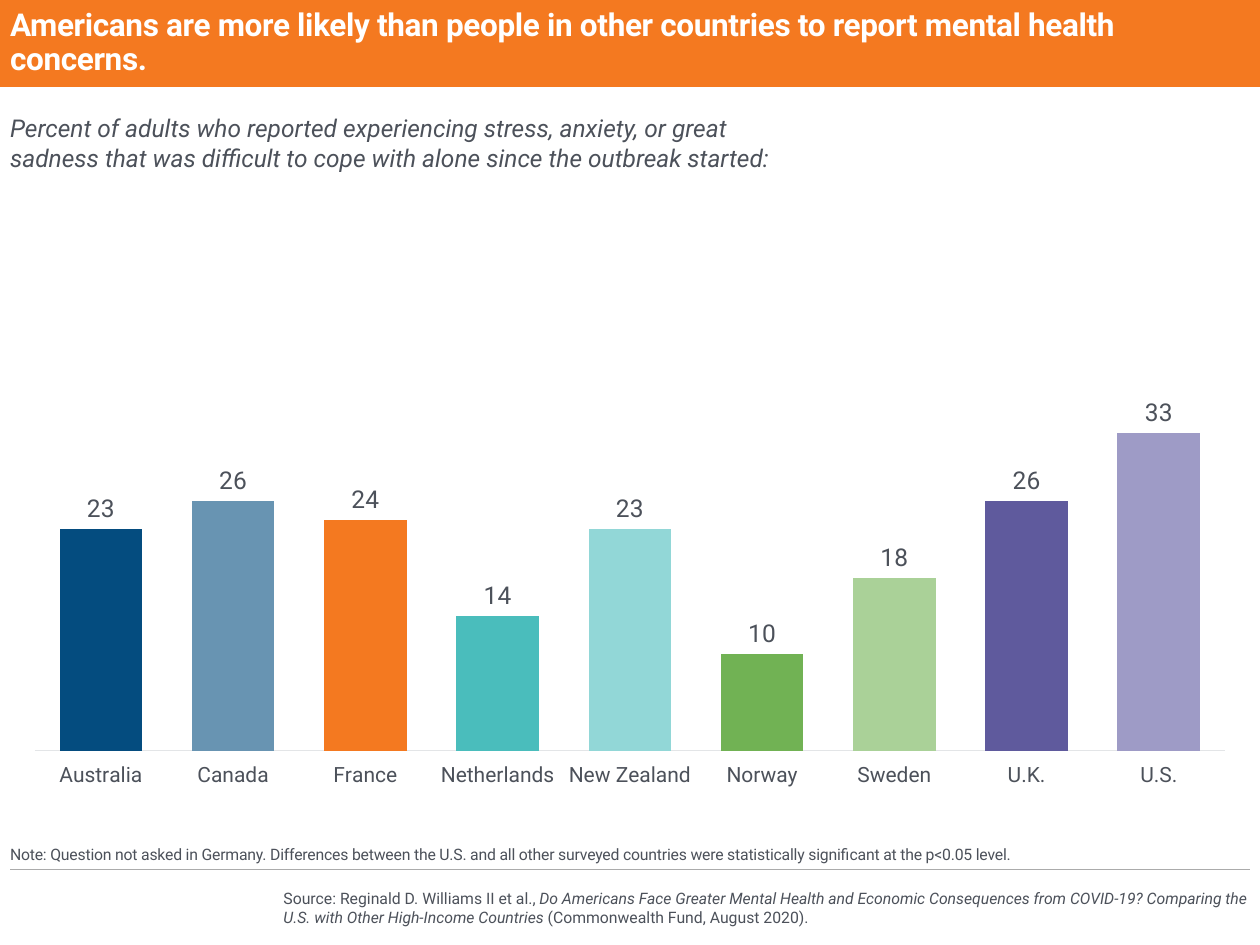
from lxml import etree
from pptx import Presentation
from pptx.chart.data import CategoryChartData
from pptx.dml.color import RGBColor
from pptx.enum.chart import XL_CHART_TYPE, XL_LABEL_POSITION, XL_TICK_LABEL_POSITION, XL_TICK_MARK
from pptx.enum.shapes import MSO_CONNECTOR, MSO_SHAPE
from pptx.enum.text import MSO_ANCHOR
from pptx.oxml.ns import qn
from pptx.util import Inches, Pt

TOP, MIDDLE, BOTTOM = MSO_ANCHOR.TOP, MSO_ANCHOR.MIDDLE, MSO_ANCHOR.BOTTOM
COLUMN = XL_CHART_TYPE.COLUMN_CLUSTERED
ABOVE = XL_LABEL_POSITION.OUTSIDE_END
LOW = XL_TICK_LABEL_POSITION.LOW
NO_TICK = XL_TICK_MARK.NONE
RECT, LINE = MSO_SHAPE.RECTANGLE, MSO_CONNECTOR.STRAIGHT

EDGE, WIDE, BAND = 0.08, 9.84, 0.69
WHITE, INK, ORANGE = "FFFFFF", "4C515A", "F47920"
BARS = [
    ("Australia", 23, "044C7F"),
    ("Canada", 26, "6894B2"),
    ("France", 24, ORANGE),
    ("Netherlands", 14, "4ABDBC"),
    ("New Zealand", 23, "92D7D7"),
    ("Norway", 10, "71B254"),
    ("Sweden", 18, "AAD198"),
    ("U.K.", 26, "5F5A9D"),
    ("U.S.", 33, "9E9BC6"),
]
PLOT = {"layoutTarget": "inner", "xMode": "edge", "yMode": "edge",
        "x": 0.02, "y": 0.02, "w": 0.96, "h": 0.91}


def rgb(code):
    return RGBColor.from_string(code)


def apply(item, values):
    for name, value in values.items():
        setattr(item, name, value)


class Deck:
    """Holds the style and the current slide, and draws each kind of element."""

    def __init__(self, slide):
        self.slide = slide
        self.shapes = slide.shapes
        self.face = "Roboto"

    def style(self, font, size, color=INK, **extra):
        apply(font, {"name": self.face, "size": Pt(size), **extra})
        font.color.rgb = rgb(color)

    def band(self, box, color):
        shape = self.shapes.add_shape(RECT, *map(Inches, box))
        shape.shadow.inherit = False
        shape.fill.solid()
        shape.fill.fore_color.rgb = rgb(color)
        shape.line.fill.background()

    def rule(self, start, end, color):
        line = self.shapes.add_connector(LINE, *map(Inches, start + end))
        line.line.color.rgb = rgb(color)
        line.line.width = Pt(0.75)
        etree.SubElement(line._element.spPr, qn("a:effectLst"))

    def text(self, box, runs, size, anchor=TOP, color=INK, space=0, lead=None, **extra):
        frame = self.shapes.add_textbox(*map(Inches, box)).text_frame
        apply(frame, {"word_wrap": True, "vertical_anchor": anchor, "margin_left": 0,
                      "margin_right": 0, "margin_top": 0, "margin_bottom": 0})
        para = frame.paragraphs[0]
        para.line_spacing = lead
        for words, italic in runs:
            run = para.add_run()
            run.text = words
            self.style(run.font, size, color, italic=italic, **extra)
            if space:
                run._r.get_or_add_rPr().set("spc", str(space))

    def chart(self, box, bars, peak):
        data = CategoryChartData()
        data.categories = [name for name, _, _ in bars]
        data.add_series("Series 1", [value for _, value, _ in bars])
        chart = self.shapes.add_chart(COLUMN, *map(Inches, box), data).chart
        apply(chart, {"has_legend": False, "has_title": False})
        self.style(chart.font, 14)

        apply(chart.value_axis, {"visible": False, "has_major_gridlines": False,
                                 "minimum_scale": 0, "maximum_scale": peak})
        axis = chart.category_axis
        apply(axis, {"major_tick_mark": NO_TICK, "minor_tick_mark": NO_TICK,
                     "tick_label_position": LOW, "has_major_gridlines": False})
        axis.format.line.color.rgb = rgb("E3E5E7")
        axis.format.line.width = Pt(0.75)
        self.style(axis.tick_labels.font, 12)

        plot = chart.plots[0]
        apply(plot, {"gap_width": 60, "vary_by_categories": False})
        series = plot.series[0]
        for spot, (_, _, color) in enumerate(bars):
            fill = series.points[spot].format.fill
            fill.solid()
            fill.fore_color.rgb = rgb(color)
        labels = series.data_labels
        apply(labels, {"show_value": True, "position": ABOVE})
        self.style(labels.font, 14)
        self.place(chart)

    def place(self, chart):
        area = chart._chartSpace.find(".//" + qn("c:plotArea"))
        for old in area.findall(qn("c:layout")):
            area.remove(old)
        layout = etree.Element(qn("c:layout"))
        area.insert(0, layout)
        manual = etree.SubElement(layout, qn("c:manualLayout"))
        for name, value in PLOT.items():
            etree.SubElement(manual, qn("c:" + name)).set("val", str(value))


def main():
    show = Presentation()
    apply(show, {"slide_width": Inches(10), "slide_height": Inches(7.5)})
    deck = Deck(show.slides.add_slide(show.slide_layouts[6]))

    deck.rule((EDGE + WIDE, 6.9), (EDGE, 6.9), "ABABAB")
    deck.band((0, 0, 10, BAND), ORANGE)
    deck.text((2.25, 7.05, 7.67, 0.3), [
        ("Source: Reginald D. Williams II et al., ", False),
        ("Do Americans Face Greater Mental Health and Economic Consequences from "
         "COVID-19? Comparing the U.S. with Other High-Income Countries ", True),
        ("(Commonwealth Fund, August 2020).", False),
    ], 9, MIDDLE)
    deck.chart((EDGE, 1.28, WIDE, 5.03), BARS, 60)
    deck.text((EDGE, 6.32, WIDE, 0.54), [
        ("Note: Question not asked in Germany. Differences between the U.S. and all other "
         "surveyed countries were statistically significant at the p<0.05 level.", False),
    ], 9, BOTTOM, space=-10, lead=0.9)
    deck.text((EDGE, 0, WIDE, BAND), [
        ("Americans are more likely than people in other countries to report "
         "mental health concerns.", False),
    ], 18, MIDDLE, WHITE, space=-20, lead=0.9, bold=True)
    deck.text((EDGE, 0.9, 6.15, 0.47), [
        ("Percent of adults who reported experiencing stress, anxiety, or great sadness "
         "that was difficult to cope with alone since the outbreak started:", True),
    ], 14)
    show.save("out.pptx")


if __name__ == "__main__":
    main()
